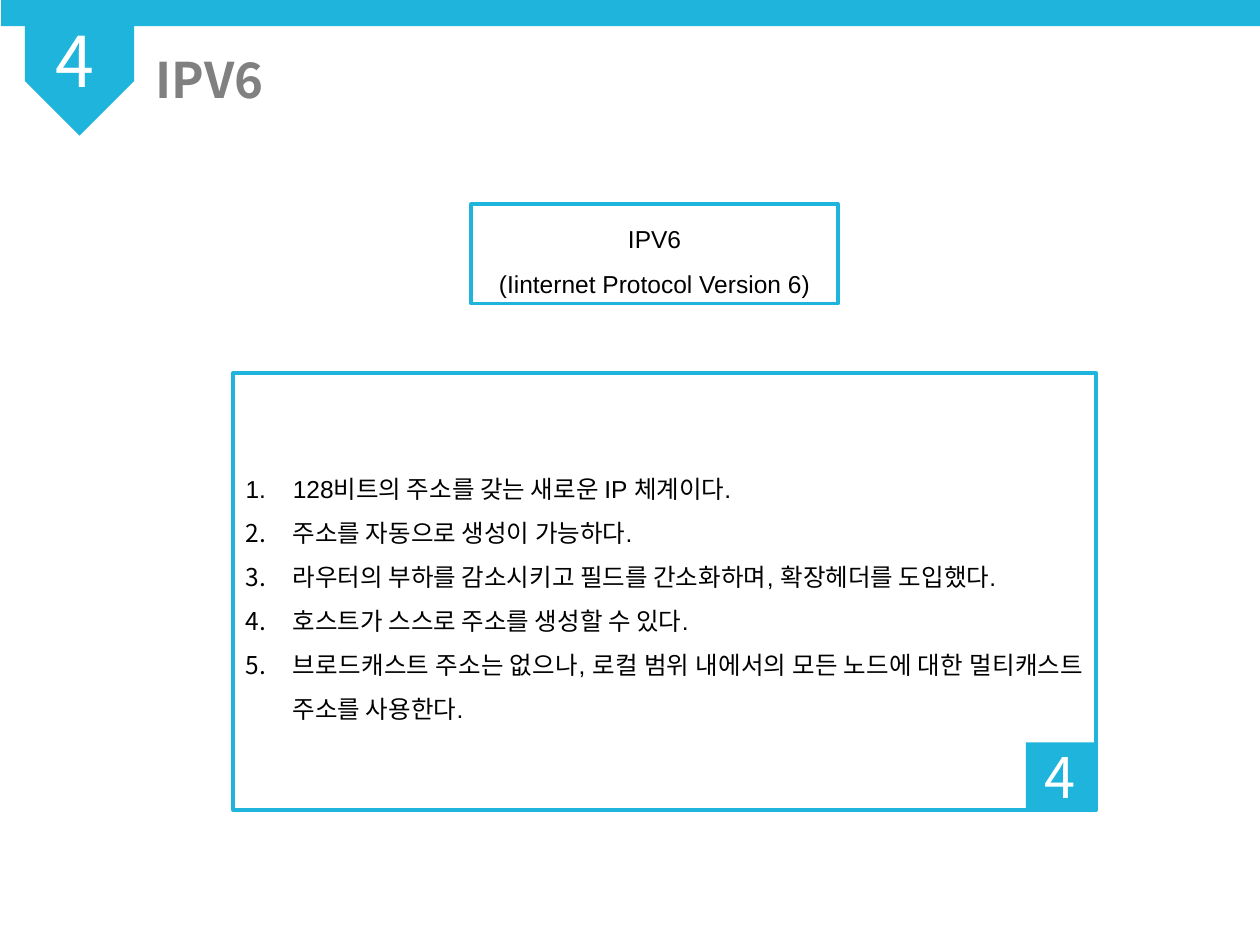
from dataclasses import dataclass
from typing import Optional

from lxml.etree import SubElement
from pptx import Presentation
from pptx.dml.color import RGBColor
from pptx.enum.shapes import MSO_SHAPE as Shp
from pptx.enum.text import MSO_ANCHOR as Anchor, PP_ALIGN as Align
from pptx.oxml.ns import qn
from pptx.util import Pt

COLORS = {"accent": "1EB4DC", "title": "808080", "body": "000000", "white": "FFFFFF"}
KOREAN = "Noto Sans CJK KR"
LATIN = "Arial"
INDENT = Pt(27)


@dataclass
class Text:
    lines: list[str]
    size: float
    font: str
    color: str
    align: Align = Align.LEFT
    anchor: Anchor = Anchor.MIDDLE
    spacing: Optional[float] = None
    before: float = 0
    bold: bool = False
    numbered: bool = False


@dataclass
class Box:
    left: float
    top: float
    width: float
    height: float
    kind: Optional[Shp] = Shp.RECTANGLE
    filled: bool = False
    rotation: float = 0
    text: Optional[Text] = None


def rgb(name: str) -> RGBColor:
    return RGBColor.from_string(COLORS[name])


def number(p) -> None:
    pPr = p._p.get_or_add_pPr()
    pPr.set("marL", str(INDENT))
    pPr.set("indent", str(-INDENT))
    SubElement(pPr, qn("a:buFont"), typeface="+mj-lt")
    SubElement(pPr, qn("a:buAutoNum"), type="arabicPeriod")


def write(sp, text: Text) -> None:
    tf = sp.text_frame
    tf.word_wrap = True
    tf.vertical_anchor = text.anchor
    for i, line in enumerate(text.lines):
        p = tf.add_paragraph() if i else tf.paragraphs[0]
        layout = {"alignment": text.align, "line_spacing": text.spacing,
                  "space_before": Pt(text.before)}
        for name, value in layout.items():
            setattr(p, name, value)
        if text.numbered:
            number(p)
        r = p.add_run()
        r.text = line
        formats = {"size": Pt(text.size), "name": text.font, "bold": text.bold}
        for name, value in formats.items():
            setattr(r.font, name, value)
        r.font.color.rgb = rgb(text.color)
        SubElement(r._r.get_or_add_rPr(), qn("a:ea"), typeface=KOREAN)


def draw(s, box: Box) -> None:
    frame = [Pt(v) for v in (box.left, box.top, box.width, box.height)]
    if box.kind is None:
        sp = s.shapes.add_textbox(*frame)
    else:
        sp = s.shapes.add_shape(box.kind, *frame)
        sp.shadow.inherit = False
        sp.rotation = box.rotation
        if box.kind == Shp.SNIP_2_SAME_RECTANGLE:
            sp.adjustments[0], sp.adjustments[1] = 0.5, 0
        if box.filled:
            sp.fill.solid()
            sp.fill.fore_color.rgb = rgb("accent")
            sp.line.fill.background()
        else:
            sp.fill.background()
            sp.line.color.rgb = rgb("accent")
            sp.line.width = Pt(2)
    if box.text:
        write(sp, box.text)


FEATURES = [
    "128비트의 주소를 갖는 새로운 IP 체계이다.",
    "주소를 자동으로 생성이 가능하다.",
    "라우터의 부하를 감소시키고 필드를 간소화하며, 확장헤더를 도입했다.",
    "호스트가 스스로 주소를 생성할 수 있다.",
    "브로드캐스트 주소는 없으나, 로컬 범위 내에서의 모든 노드에 대한 멀티캐스트 주소를 사용한다.",
]
BOXES = [
    Box(133.2, 213.1, 493.2, 249.8,
        text=Text(FEATURES, 14, LATIN, "body", Align.JUSTIFY, spacing=1.5, numbered=True)),
    Box(82, 24.5, 504, 53.3, None,
        text=Text(["IPV6"], 28, KOREAN, "title", anchor=Anchor.TOP, before=5.6, bold=True)),
    Box(0.7, 0, 720, 15, filled=True),
    Box(14.2, 15, 62.5, 62.5, Shp.SNIP_2_SAME_RECTANGLE, True, 180),
    Box(24.5, 6.5, 49, 55.4, None,
        text=Text(["4"], 40, KOREAN, "white", anchor=Anchor.TOP)),
    Box(586.2, 424.2, 39.6, 38.9, filled=True,
        text=Text(["4"], 32, KOREAN, "white", Align.CENTER)),
    Box(269.3, 116.6, 209.5, 56.9,
        text=Text(["IPV6", "(Iinternet Protocol Version 6)"], 14, LATIN, "body",
                  Align.CENTER, spacing=1.5)),
]


def main() -> None:
    """Build the IPV6 slide and save it."""
    prs = Presentation()
    prs.slide_width, prs.slide_height = Pt(720), Pt(540)
    s = prs.slides.add_slide(prs.slide_layouts[6])
    for box in BOXES:
        draw(s, box)
    prs.save("out.pptx")


if __name__ == "__main__":
    main()
